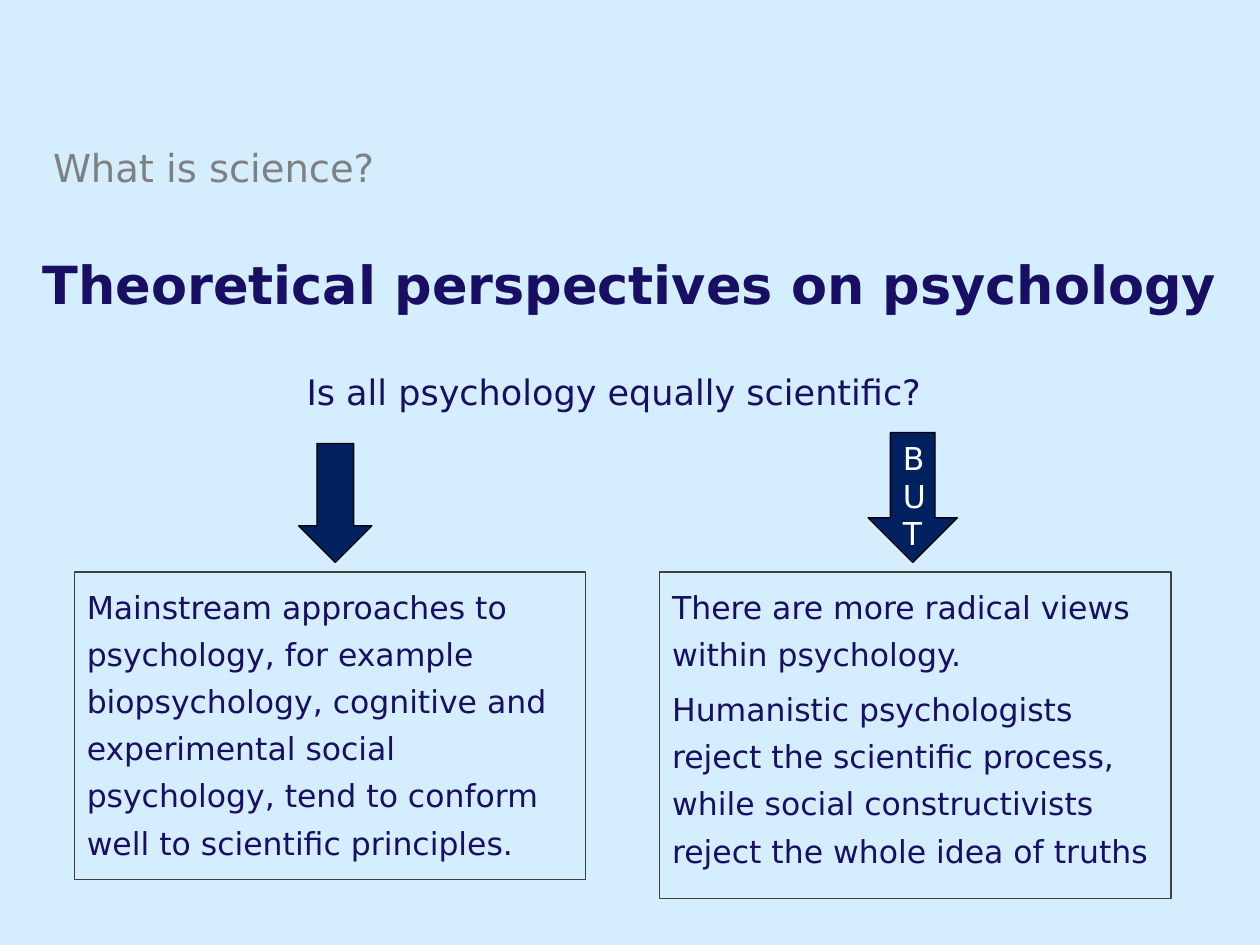
from pptx import Presentation
from pptx import util as u
from pptx.dml.color import RGBColor
from pptx.enum import shapes, text

SKY = RGBColor(0xD4, 0xEE, 0xFF)
INDIGO = RGBColor(0x18, 0x0E, 0x63)
NAVY = RGBColor(0x00, 0x20, 0x60)
GREY = RGBColor(0x80, 0x80, 0x80)
DARK_GREY = RGBColor(0x40, 0x40, 0x40)
BLACK = RGBColor(0, 0, 0)
WHITE = RGBColor(0xFF, 0xFF, 0xFF)
FONT = "DejaVu Sans"
LEFT, CENTER = text.PP_ALIGN.LEFT, text.PP_ALIGN.CENTER
TOP, MIDDLE = text.MSO_ANCHOR.TOP, text.MSO_ANCHOR.MIDDLE
BOX_Y, BOX_W = 11.53, 10.31


def set_all(obj, values):
    for name, value in values.items():
        setattr(obj, name, value)


def write(sp, paragraphs, size, color=INDIGO, bold=False, align=LEFT,
          anchor=TOP, spacing=1.0, gap=0):
    tf = sp.text_frame
    set_all(tf, {"word_wrap": True, "vertical_anchor": anchor})
    for i, words in enumerate(paragraphs):
        p = tf.paragraphs[0] if i == 0 else tf.add_paragraph()
        set_all(p, {"alignment": align, "line_spacing": spacing,
                    "space_before": u.Pt(gap if i else 0)})
        r = p.add_run()
        r.text = words
        set_all(r.font, {"name": FONT, "size": u.Pt(size), "bold": bold})
        r.font.color.rgb = color


def add_label(s, x, y, w, h, words, size, **style):
    sp = s.shapes.add_textbox(u.Cm(x), u.Cm(y), u.Cm(w), u.Cm(h))
    write(sp, [words], size, **style)
    return sp


def add_outlined(s, kind, x, y, w, h, line):
    sp = s.shapes.add_shape(kind, u.Cm(x), u.Cm(y), u.Cm(w), u.Cm(h))
    sp.shadow.inherit = False
    sp.line.color.rgb = line
    sp.line.width = u.Pt(0.75)
    return sp


def add_view_box(s, x, h, paragraphs):
    sp = add_outlined(s, shapes.MSO_SHAPE.RECTANGLE, x, BOX_Y, BOX_W, h, DARK_GREY)
    sp.fill.background()
    write(sp, paragraphs, 18, spacing=1.25, gap=4.5)


def add_arrow(s, x, y, w, h, words=None):
    sp = add_outlined(s, shapes.MSO_SHAPE.DOWN_ARROW, x, y, w, h, BLACK)
    sp.fill.solid()
    sp.fill.fore_color.rgb = NAVY
    if words:
        write(sp, [words], 18, color=WHITE)


def main():
    prs = Presentation()
    set_all(prs, {"slide_width": u.Cm(25.4), "slide_height": u.Cm(19.05)})
    s = prs.slides.add_slide(prs.slide_layouts[6])
    s.background.fill.solid()
    s.background.fill.fore_color.rgb = SKY

    topic = add_label(s, 1.07, 2.59, 9.53, 1.24, "What is science?", 22,
                      color=GREY, anchor=MIDDLE, spacing=1.35)
    set_all(topic.text_frame, dict.fromkeys(
        ("margin_left", "margin_top", "margin_right", "margin_bottom"), 0))
    add_label(s, 0.5, 4.45, 24.4, 2.54, "Theoretical perspectives on psychology",
              30, bold=True, align=CENTER, anchor=MIDDLE)
    add_label(s, 0.9, 7.14, 22.96, 1.32, "Is all psychology equally scientific?",
              20, align=CENTER, spacing=1.25)

    add_view_box(s, 1.5, 6.2, [
        "Mainstream approaches to psychology, for example biopsychology, "
        "cognitive and experimental social psychology, tend to conform well "
        "to scientific principles."])
    add_view_box(s, 13.3, 6.58, [
        "There are more radical views within psychology.",
        "Humanistic psychologists reject the scientific process, while social "
        "constructivists reject the whole idea of truths"])
    add_arrow(s, 6.02, 8.94, 1.48, 2.4)
    add_arrow(s, 17.5, 8.72, 1.8, 2.62, "BUT")

    prs.save("out.pptx")


if __name__ == "__main__":
    main()
